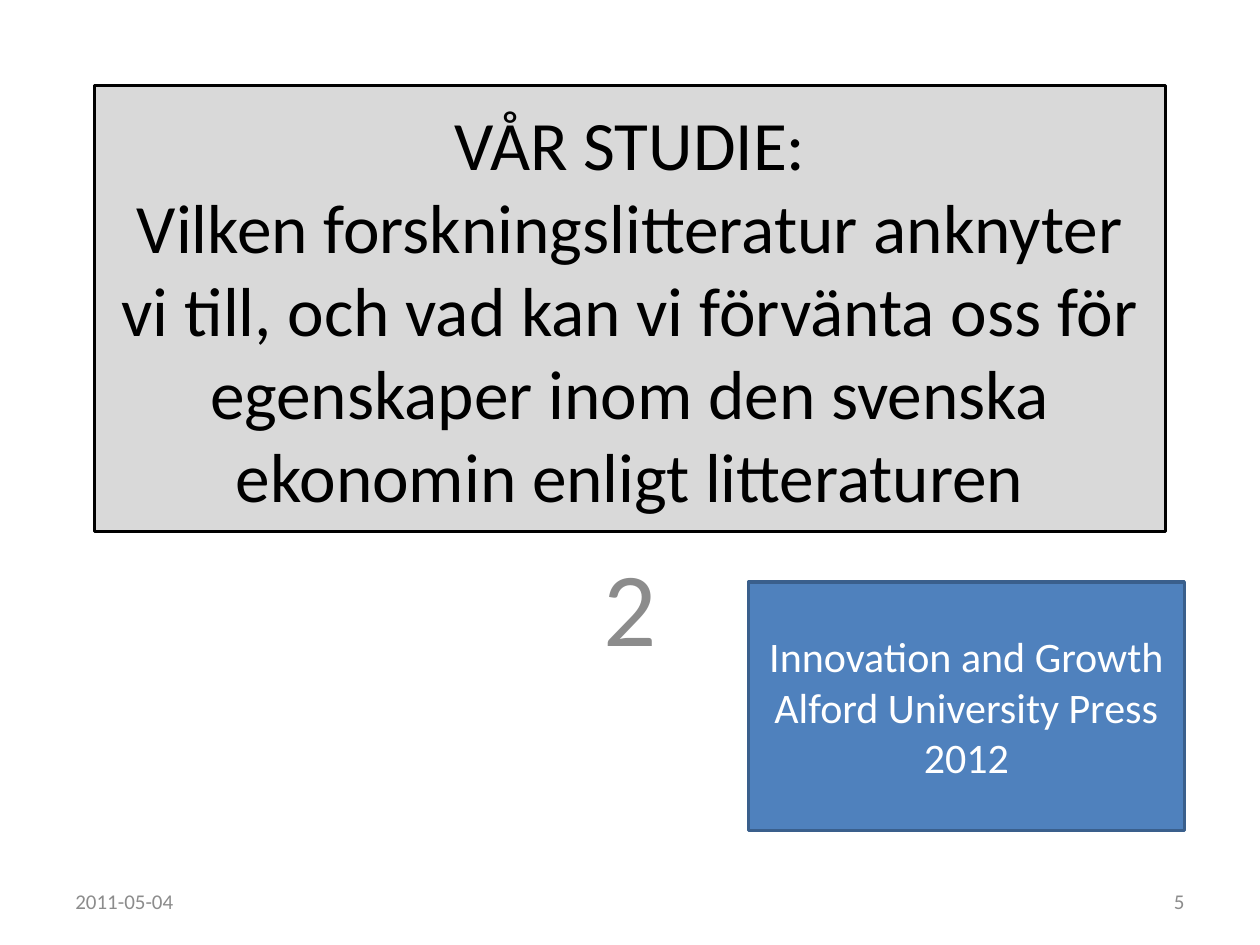
from pptx import Presentation
from pptx import util as u
from pptx.dml.color import RGBColor
from pptx.enum import shapes, text

COLORS = {
    "black": "000000",
    "white": "FFFFFF",
    "panel": "D9D9D9",
    "muted": "8C8C8C",
    "blue": "4F81BD",
    "blue_edge": "3A5F8C",
}
LEFT, CENTER, RIGHT = text.PP_ALIGN.LEFT, text.PP_ALIGN.CENTER, text.PP_ALIGN.RIGHT
TOP, MIDDLE = text.MSO_ANCHOR.TOP, text.MSO_ANCHOR.MIDDLE


class SlideBuilder:
    font = "Calibri"
    line_width = 2

    def __init__(self, prs):
        self.s = prs.slides.add_slide(prs.slide_layouts[5])

    def color(self, name):
        return RGBColor.from_string(COLORS[name])

    def paint(self, sp, fill, line):
        sp.fill.solid()
        sp.fill.fore_color.rgb = self.color(fill)
        sp.line.color.rgb = self.color(line)
        sp.line.width = u.Pt(self.line_width)

    def set_text(self, sp, content, size, color, align=CENTER, anchor=MIDDLE):
        tf = sp.text_frame
        tf.text = content
        tf.word_wrap = True
        tf.auto_size = text.MSO_AUTO_SIZE.NONE
        tf.vertical_anchor = anchor
        for p in tf.paragraphs:
            p.alignment = align
            for r in p.runs:
                r.font.name = self.font
                r.font.size = u.Pt(size)
                r.font.color.rgb = self.color(color)

    def title(self, box, content, size):
        sp = self.s.shapes.title
        sp.left, sp.top, sp.width, sp.height = map(u.Inches, box)
        self.paint(sp, "panel", "black")
        self.set_text(sp, content, size, "black")

    def label(self, box, content, size, align, anchor=MIDDLE):
        sp = self.s.shapes.add_textbox(*map(u.Inches, box))
        self.set_text(sp, content, size, "muted", align, anchor)

    def panel(self, box, content, size):
        sp = self.s.shapes.add_shape(shapes.MSO_SHAPE.RECTANGLE, *map(u.Inches, box))
        sp.shadow.inherit = False
        self.paint(sp, "blue", "blue_edge")
        self.set_text(sp, content, size, "white")


def main():
    prs = Presentation()
    prs.slide_width, prs.slide_height = u.Inches(10), u.Inches(7.5)
    b = SlideBuilder(prs)
    b.title(
        (0.75, 0.68, 8.5, 3.54),
        "VÅR STUDIE:\vVilken forskningslitteratur anknyter vi till, och vad kan vi "
        "förvänta oss för egenskaper inom den svenska ekonomin enligt litteraturen",
        39.6,
    )
    b.label((1.5, 4.25, 7, 1.92), "2", 60, CENTER, TOP)
    b.label((0.5, 6.95, 2.33, 0.4), "2011-05-04", 12, LEFT)
    b.label((7.17, 6.95, 2.33, 0.4), "5", 12, RIGHT)
    b.panel(
        (5.94, 4.62, 3.46, 1.97),
        "Innovation and Growth\nAlford University Press 2012",
        24,
    )
    prs.save("out.pptx")


if __name__ == "__main__":
    main()
